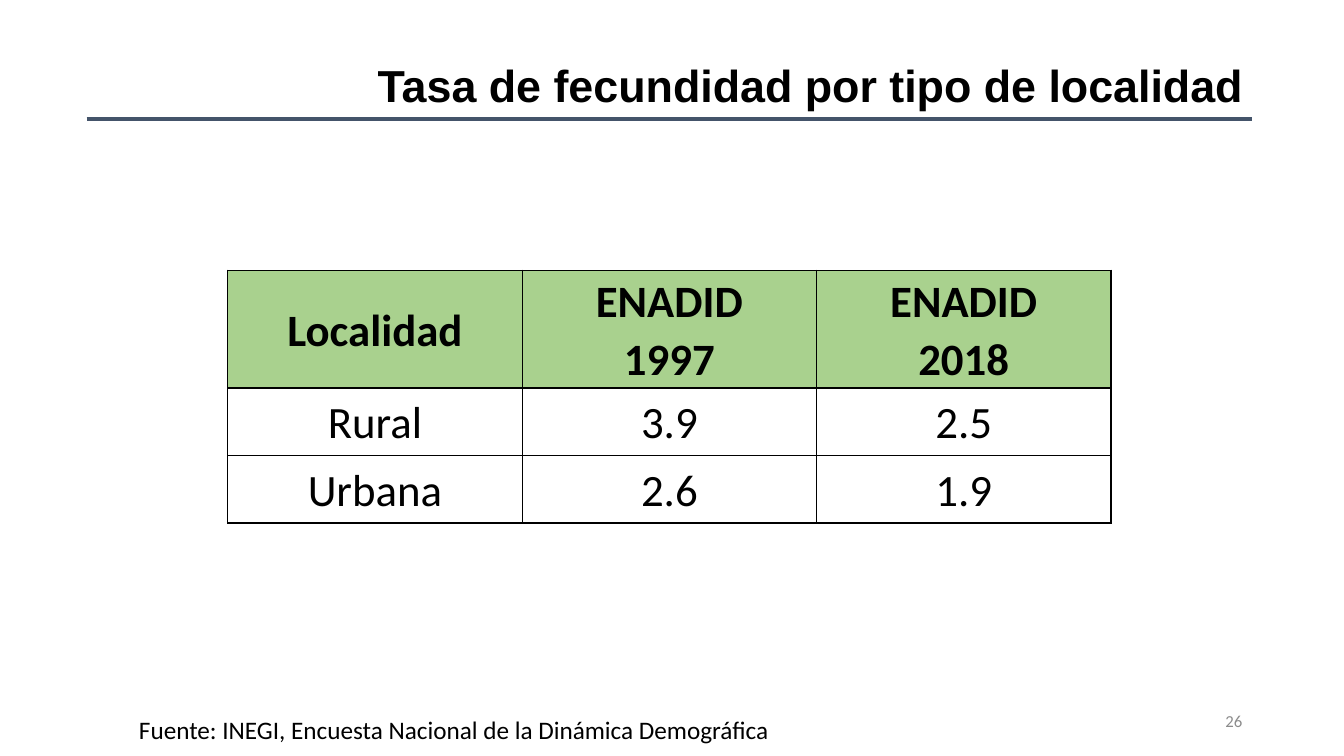
import lxml.etree
import pptx
import pptx.dml.color
import pptx.enum.shapes
import pptx.enum.text
import pptx.oxml.ns
import pptx.util

Inches = pptx.util.Inches
Pt = pptx.util.Pt
RGBColor = pptx.dml.color.RGBColor
ALIGN = pptx.enum.text.PP_ALIGN
ANCHOR = pptx.enum.text.MSO_ANCHOR
qn = pptx.oxml.ns.qn

BLACK = RGBColor(0x00, 0x00, 0x00)
GRAY = RGBColor(0x8C, 0x8C, 0x8C)
SLATE = RGBColor(0x44, 0x54, 0x6A)
GREEN = RGBColor(0xA9, 0xD1, 0x8E)

FERTILITY_ROWS = [
    ["Localidad", "ENADID\n1997", "ENADID\n2018"],
    ["Rural", "3.9", "2.5"],
    ["Urbana", "2.6", "1.9"],
]
ROW_HEIGHTS = [1.17, 0.67, 0.67]


def style_paragraph(para, size, align, color=BLACK, font="Calibri", bold=False, spacing=1.0):
    para.alignment = align
    para.line_spacing = spacing
    para.font.size = Pt(size)
    para.font.name = font
    para.font.bold = bold
    para.font.color.rgb = color


def add_text(page, text, left, top, width, height, size, align,
             anchor=ANCHOR.MIDDLE, wrap=True, **style):
    box = page.shapes.add_textbox(Inches(left), Inches(top), Inches(width), Inches(height))
    frame = box.text_frame
    frame.word_wrap = wrap
    frame.vertical_anchor = anchor
    frame.text = text
    style_paragraph(frame.paragraphs[0], size, align, **style)


def add_heading(page, left, top, width, height):
    """Right-aligned title with a rule beneath it."""
    rule_left, rule_top = Inches(left - 0.08), Inches(top + 1.03)
    rule = page.shapes.add_connector(pptx.enum.shapes.MSO_CONNECTOR.STRAIGHT, rule_left, rule_top,
                                     rule_left + Inches(11.56), rule_top)
    rule.line.color.rgb = SLATE
    rule.line.width = Pt(3)
    lxml.etree.SubElement(rule.element.spPr, qn("a:effectLst"))
    add_text(page, "Tasa de fecundidad por tipo de localidad", left, top, width, height,
             32, ALIGN.RIGHT, font="Arial", bold=True, spacing=0.9)


def add_cell_borders(cell):
    properties = cell._tc.get_or_add_tcPr()
    for side in ("a:lnL", "a:lnR", "a:lnT", "a:lnB"):
        border = lxml.etree.SubElement(properties, qn(side), w=str(Pt(1)))
        fill = lxml.etree.SubElement(border, qn("a:solidFill"))
        lxml.etree.SubElement(fill, qn("a:srgbClr"), val=str(BLACK))


def fill_cell(cell, text, is_header):
    add_cell_borders(cell)
    if is_header:
        cell.fill.solid()
        cell.fill.fore_color.rgb = GREEN
    else:
        cell.fill.background()
    cell.margin_left = cell.margin_right = Inches(0.07)
    cell.margin_top = cell.margin_bottom = 0
    cell.vertical_anchor = ANCHOR.MIDDLE
    cell.text = text
    for para in cell.text_frame.paragraphs:
        style_paragraph(para, 32, ALIGN.CENTER, bold=is_header, spacing=1.07)


def add_fertility_table(page, left, top, width):
    table = page.shapes.add_table(len(FERTILITY_ROWS), len(FERTILITY_ROWS[0]), Inches(left),
                                  Inches(top), Inches(width), Inches(sum(ROW_HEIGHTS))).table
    table.first_row = table.horz_banding = False
    for row_index, (texts, height) in enumerate(zip(FERTILITY_ROWS, ROW_HEIGHTS)):
        table.rows[row_index].height = Inches(height)
        for column_index, text in enumerate(texts):
            fill_cell(table.cell(row_index, column_index), text, row_index == 0)


def add_footer(page, left, top):
    """Source note at the left and page number at the right."""
    add_text(page, "26", left + 8.14, top, 3, 0.4, 12, ALIGN.RIGHT, color=GRAY)
    add_text(page, "Fuente: INEGI, Encuesta Nacional de la Dinámica Demográfica",
             left, top + 0.09, 6.61, 0.4, 18, ALIGN.LEFT, anchor=ANCHOR.TOP, wrap=False)


def main():
    deck = pptx.Presentation()
    deck.slide_width = Inches(13.33)
    deck.slide_height = Inches(7.5)
    page = deck.slides.add_slide(deck.slide_layouts[6])
    add_fertility_table(page, 2.26, 2.68, 8.76)
    add_heading(page, 0.94, 0.15, 11.5, 1.45)
    add_footer(page, 1.28, 6.95)
    deck.save("out.pptx")


if __name__ == "__main__":
    main()
